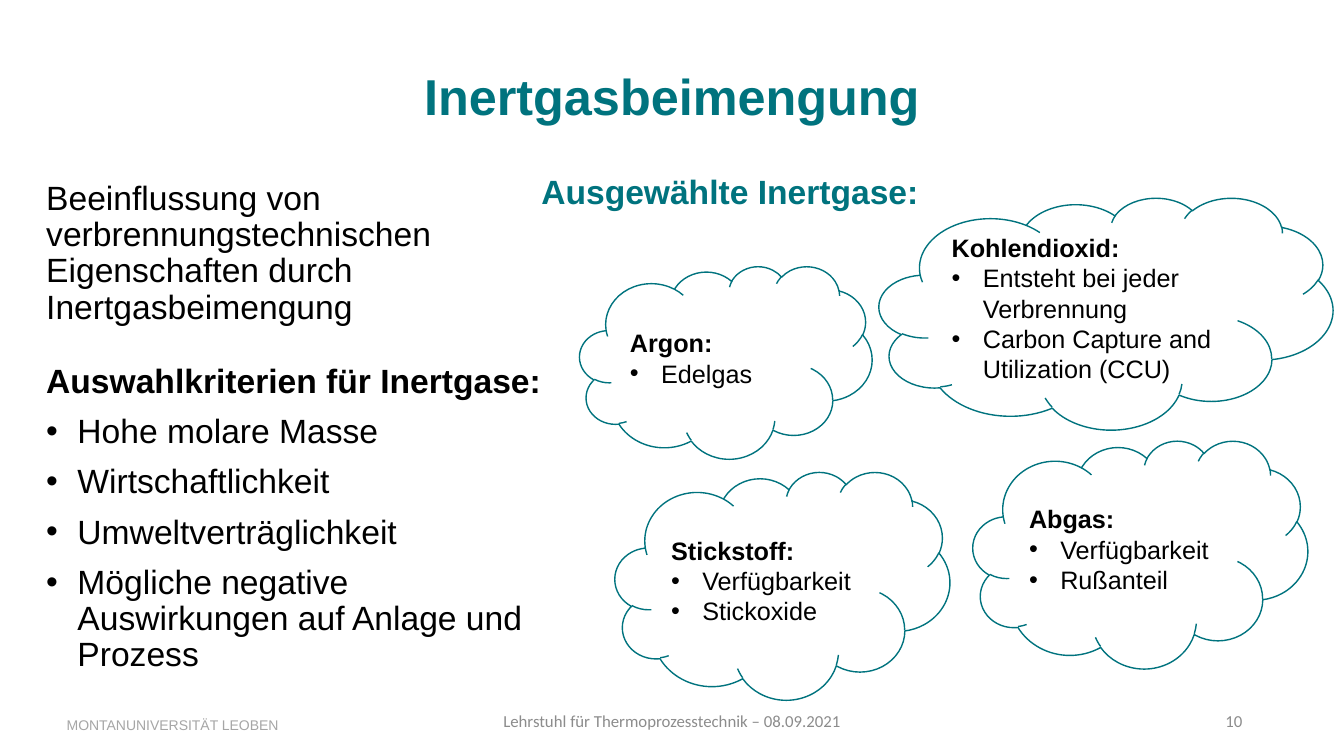
from lxml import etree
from pptx import Presentation
from pptx.dml.color import RGBColor
from pptx.enum.shapes import MSO_SHAPE
from pptx.enum.text import MSO_ANCHOR, PP_ALIGN
from pptx.oxml.ns import qn
from pptx.util import Inches, Pt

TEAL = RGBColor(0x00, 0x73, 0x7E)
BLACK = RGBColor(0x00, 0x00, 0x00)
WHITE = RGBColor(0xFF, 0xFF, 0xFF)
GREY = RGBColor(0x8C, 0x8C, 0x8C)
LIGHT_GREY = RGBColor(0xA6, 0xA6, 0xA6)

CLOUD = MSO_SHAPE.CLOUD
TOP, MIDDLE = MSO_ANCHOR.TOP, MSO_ANCHOR.MIDDLE
LEFT, CENTER, RIGHT = PP_ALIGN.LEFT, PP_ALIGN.CENTER, PP_ALIGN.RIGHT
TITLE_ONLY = 5

TITLE = dict(name="Arial", size=Pt(36), bold=True, color=TEAL)
HEADING = dict(name="Arial", size=Pt(24), bold=True, color=TEAL)
BODY = dict(name="Arial", size=Pt(24), bold=False, color=BLACK)
CLOUD_TEXT = dict(BODY, size=Pt(18))
FOOTER = dict(name="Calibri", size=Pt(12), bold=False, color=GREY)
UNIVERSITY = dict(name="Arial", size=Pt(10), bold=False, color=LIGHT_GREY)

CLOUDS = [
    ((5.75, 2.64, 2.9, 1.91), "Argon:", ["Edelgas"]),
    ((8.72, 1.96, 4.5, 2.3), "Kohlendioxid:",
     ["Entsteht bei jeder Verbrennung", "Carbon Capture and Utilization (CCU)"]),
    ((6.1, 4.68, 3.32, 2.26), "Stickstoff:", ["Verfügbarkeit", "Stickoxide"]),
    ((9.65, 4.37, 3.32, 2.26), "Abgas:", ["Verfügbarkeit", "Rußanteil"]),
]
CRITERIA = [
    "Hohe molare Masse",
    "Wirtschaftlichkeit",
    "Umweltverträglichkeit",
    "Mögliche negative Auswirkungen auf Anlage und Prozess",
]


class SlideBuilder:
    def __init__(self, prs):
        self.slide = prs.slides.add_slide(prs.slide_layouts[TITLE_ONLY])

    def bullet(self, p):
        pPr = p._p.get_or_add_pPr()
        pPr.set("marL", str(Inches(0.31)))
        pPr.set("indent", str(-Inches(0.31)))
        etree.SubElement(pPr, qn("a:buFont")).set("typeface", "Arial")
        etree.SubElement(pPr, qn("a:buChar")).set("char", "•")

    def paragraph(self, tf, text, style, bullet=False, **spacing):
        """Fill the empty first paragraph, or append a further one."""
        p = tf.paragraphs[0]
        if p.runs:
            p = tf.add_paragraph()
        if bullet:
            self.bullet(p)
        for key, value in dict({"alignment": LEFT}, **spacing).items():
            setattr(p, key, value)
        r = p.add_run()
        r.text = text
        for key, value in style.items():
            if key == "color":
                r.font.color.rgb = value
            else:
                setattr(r.font, key, value)

    def title(self, box, text):
        sp = self.slide.shapes.title
        sp.left, sp.top, sp.width, sp.height = map(Inches, box)
        sp.text_frame.vertical_anchor = MIDDLE
        self.paragraph(sp.text_frame, text, TITLE, alignment=CENTER, line_spacing=0.9)

    def text(self, box, text, style, anchor=TOP, **spacing):
        tf = self.slide.shapes.add_textbox(*map(Inches, box)).text_frame
        tf.word_wrap = True
        tf.vertical_anchor = anchor
        self.paragraph(tf, text, style, **spacing)
        return tf

    def cloud(self, box, gas, points):
        sp = self.slide.shapes.add_shape(CLOUD, *map(Inches, box))
        sp.shadow.inherit = False
        sp.fill.solid()
        sp.fill.fore_color.rgb = WHITE
        sp.line.color.rgb = TEAL
        sp.line.width = Pt(1)
        tf = sp.text_frame
        tf.word_wrap = True
        tf.vertical_anchor = MIDDLE
        self.paragraph(tf, gas, dict(CLOUD_TEXT, bold=True))
        for point in points:
            self.paragraph(tf, point, CLOUD_TEXT, bullet=True)


def main():
    prs = Presentation()
    prs.slide_width, prs.slide_height = Inches(13.33), Inches(7.5)
    s = SlideBuilder(prs)

    s.title((0.36, 0.4, 12.61, 1.16), "Inertgasbeimengung")
    for box, gas, points in CLOUDS:
        s.cloud(box, gas, points)
    s.text((5.27, 1.65, 4.15, 0.5), "Ausgewählte Inertgase:", HEADING)

    tf = s.text((0.36, 1.75, 5.32, 5.35),
                "Beeinflussung von verbrennungstechnischen Eigenschaften "
                "durch Inertgasbeimengung", BODY, line_spacing=0.9)
    s.paragraph(tf, "Auswahlkriterien für Inertgase:", dict(BODY, bold=True),
                line_spacing=0.9, space_before=Pt(27))
    for criterion in CRITERIA:
        s.paragraph(tf, criterion, BODY, bullet=True,
                    line_spacing=0.9, space_before=Pt(10))

    s.text((0.48, 7.06, 2.38, 0.27), "MONTANUNIVERSITÄT LEOBEN", UNIVERSITY,
           alignment=RIGHT)
    s.text((4.69, 6.95, 3.95, 0.4), "Lehrstuhl für Thermoprozesstechnik – 08.09.2021",
           FOOTER, MIDDLE, alignment=CENTER)
    s.text((9.42, 6.95, 3, 0.4), "10", FOOTER, MIDDLE, alignment=RIGHT)

    prs.save("out.pptx")


if __name__ == "__main__":
    main()
